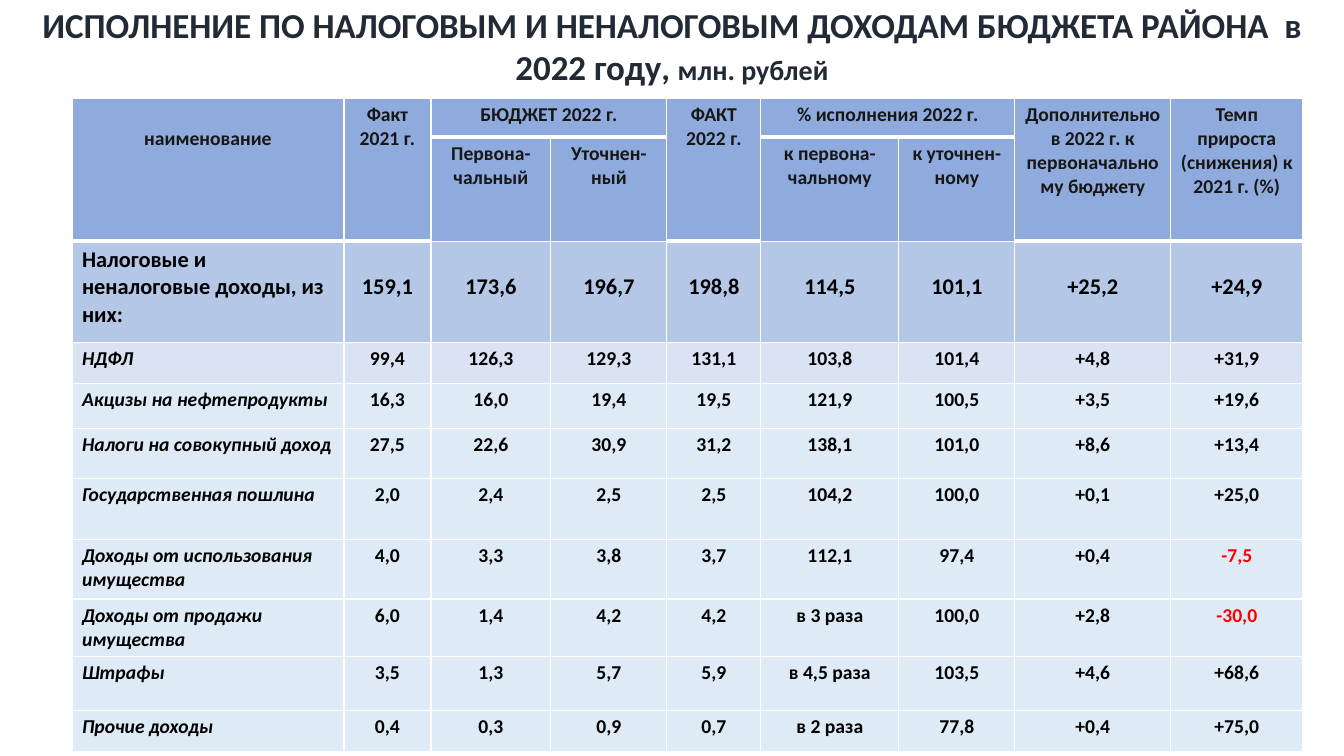
from lxml.etree import SubElement
from pptx import Presentation
from pptx.dml.color import RGBColor as RGB
from pptx.enum.text import PP_ALIGN as AL
from pptx.oxml.ns import qn
from pptx.util import Emu, Pt

FONT = "Calibri"
TITLE_INK = RGB(0x22, 0x2A, 0x35)
HEAD_INK = RGB(0x18, 0x17, 0x17)
BLACK = RGB(0, 0, 0)
RED = RGB(0xFF, 0, 0)
WHITE = RGB(0xFF, 0xFF, 0xFF)
HEAD_FILL = RGB(0x8F, 0xAA, 0xDC)
TOTAL_FILL = RGB(0xB4, 0xC7, 0xE7)
FIRST_FILL = RGB(0xDA, 0xE3, 0xF3)
ROW_FILL = RGB(0xDE, 0xEB, 0xF7)

TITLE = [
    ("ИСПОЛНЕНИЕ ПО НАЛОГОВЫМ И НЕНАЛОГОВЫМ ДОХОДАМ БЮДЖЕТА РАЙОНА  в 2022 году", 25),
    (", ", 24),
    ("млн. рублей", 20),
]
ROWS = [
    ("наименование", "Факт 2021 г.", "БЮДЖЕТ 2022 г.", "", "ФАКТ 2022 г.",
     "% исполнения 2022 г.", "", "Дополнительно в 2022 г. к первоначальному бюджету",
     "Темп прироста (снижения) к 2021 г. (%)"),
    ("", "", "Первона-чальный", "Уточнен-ный", "",
     "к первона-чальному", "к уточнен-ному", "", ""),
    ("Налоговые и неналоговые доходы, из них:", "159,1", "173,6", "196,7", "198,8",
     "114,5", "101,1", "+25,2", "+24,9"),
    ("НДФЛ", "99,4", "126,3", "129,3", "131,1", "103,8", "101,4", "+4,8", "+31,9"),
    ("Акцизы на нефтепродукты", "16,3", "16,0", "19,4", "19,5",
     "121,9", "100,5", "+3,5", "+19,6"),
    ("Налоги на совокупный доход", "27,5", "22,6", "30,9", "31,2",
     "138,1", "101,0", "+8,6", "+13,4"),
    ("Государственная пошлина", "2,0", "2,4", "2,5", "2,5",
     "104,2", "100,0", "+0,1", "+25,0"),
    ("Доходы от использования имущества", "4,0", "3,3", "3,8", "3,7",
     "112,1", "97,4", "+0,4", "-7,5"),
    ("Доходы от продажи имущества", "6,0", "1,4", "4,2", "4,2",
     "в 3 раза", "100,0", "+2,8", "-30,0"),
    ("Штрафы", "3,5", "1,3", "5,7", "5,9", "в 4,5 раза", "103,5", "+4,6", "+68,6"),
    ("Прочие доходы", "0,4", "0,3", "0,9", "0,7", "в 2 раза", "77,8", "+0,4", "+75,0"),
]
COL_WIDTHS = (272, 87, 120, 116, 94, 138, 116, 156, 132)
ROW_HEIGHTS = (39, 104, 101, 41, 45, 50, 61, 60, 57, 54, 41)
GROUP_COLS = (2, 5)
TALL_COLS = (0, 1, 4, 7, 8)
HEAD_ROWS, TOTAL_ROW = 2, 2
FILLS = [HEAD_FILL, HEAD_FILL, TOTAL_FILL, FIRST_FILL] + [ROW_FILL] * 7


def px(n):
    return Emu(round(n * 12192000 / 1344))


def rule_below(row, col):
    return 3 if row == 0 or (row == 1 and col in TALL_COLS) else 1


def set_borders(cell, widths):
    tc_pr = cell._tc.get_or_add_tcPr()
    for side, width in zip("LRTB", widths):
        ln = SubElement(tc_pr, qn(f"a:ln{side}"), w=str(Pt(width)))
        fill = SubElement(ln, qn("a:solidFill"))
        SubElement(fill, qn("a:srgbClr"), val=str(WHITE))


def set_font(font, size, color):
    font.name, font.size, font.bold = FONT, Pt(size), True
    font.color.rgb = color


def add_title(s):
    tf = s.shapes.add_textbox(px(32), px(-1), px(1280), px(99)).text_frame
    tf.word_wrap = True
    p = tf.paragraphs[0]
    p.alignment = AL.CENTER
    for text, size in TITLE:
        r = p.add_run()
        r.text = text
        set_font(r.font, size, TITLE_INK)


def fill_cell(cell, row, col, text):
    above = rule_below(row - 1, col) if row else 1
    set_borders(cell, (1, 1, above, rule_below(row, col)))
    cell.fill.solid()
    cell.fill.fore_color.rgb = FILLS[row]
    if not text:
        return
    if (row, col) == (0, 0):
        cell.margin_top = px(29)
    elif row == TOTAL_ROW and col:
        cell.margin_top = px(32)
    p = cell.text_frame.paragraphs[0]
    p.text = text
    p.alignment = AL.LEFT if col == 0 and row >= HEAD_ROWS else AL.CENTER
    color = HEAD_INK if row < HEAD_ROWS else RED if text.startswith("-") else BLACK
    set_font(p.font, 16 if row == TOTAL_ROW else 14, color)
    p.font.italic = col == 0 and row > TOTAL_ROW


def add_budget_table(s):
    table = s.shapes.add_table(len(ROWS), len(COL_WIDTHS), px(72), px(98),
                               px(sum(COL_WIDTHS)), px(sum(ROW_HEIGHTS))).table
    for column, width in zip(table.columns, COL_WIDTHS):
        column.width = px(width)
    for line, height in zip(table.rows, ROW_HEIGHTS):
        line.height = px(height)
    for col in GROUP_COLS:
        table.cell(0, col).merge(table.cell(0, col + 1))
    for col in TALL_COLS:
        table.cell(0, col).merge(table.cell(1, col))
    for row, texts in enumerate(ROWS):
        for col, text in enumerate(texts):
            fill_cell(table.cell(row, col), row, col, text)


def main():
    prs = Presentation()
    prs.slide_width, prs.slide_height = px(1344), px(756)
    s = prs.slides.add_slide(prs.slide_layouts[6])
    add_title(s)
    add_budget_table(s)
    prs.save("out.pptx")


if __name__ == "__main__":
    main()
